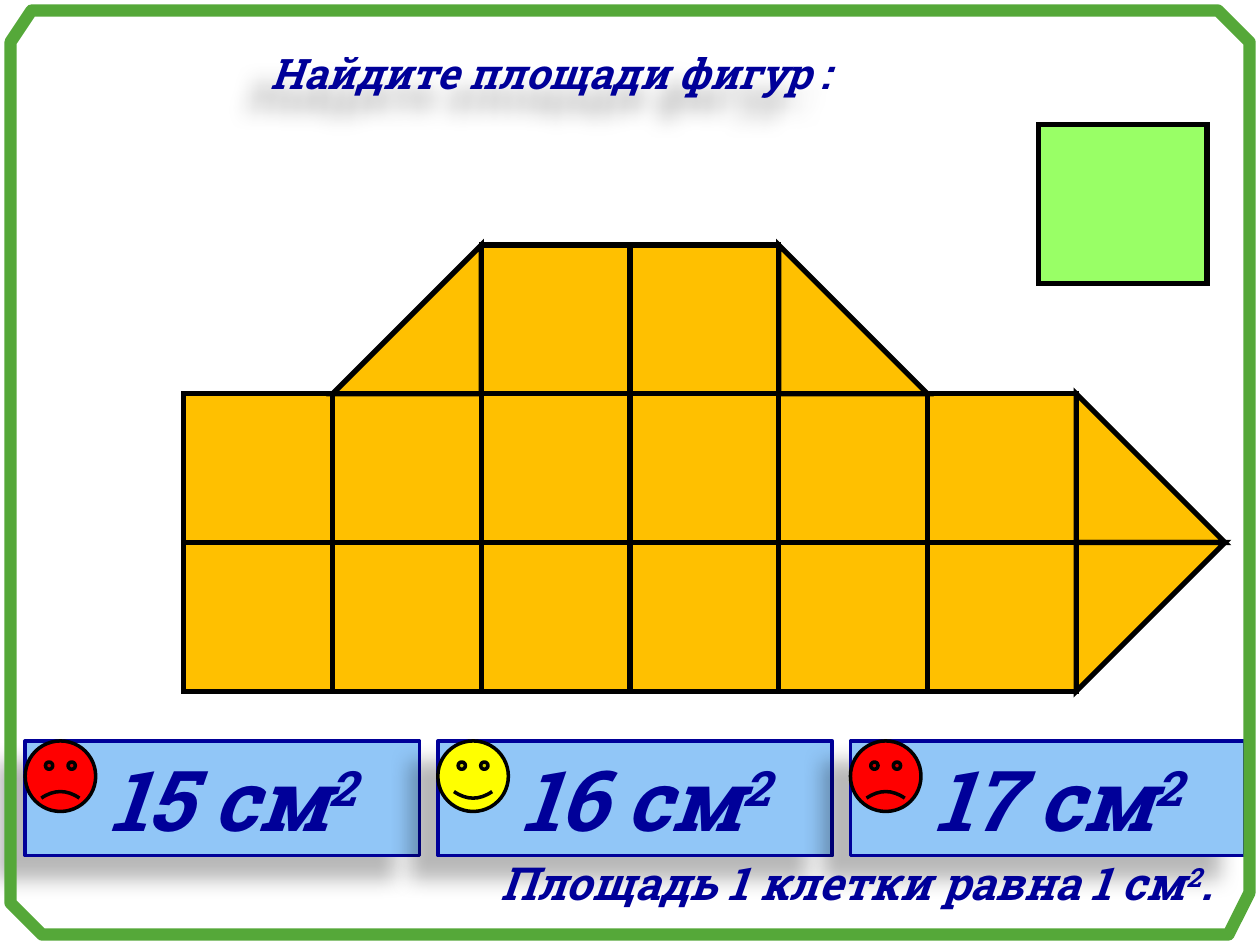
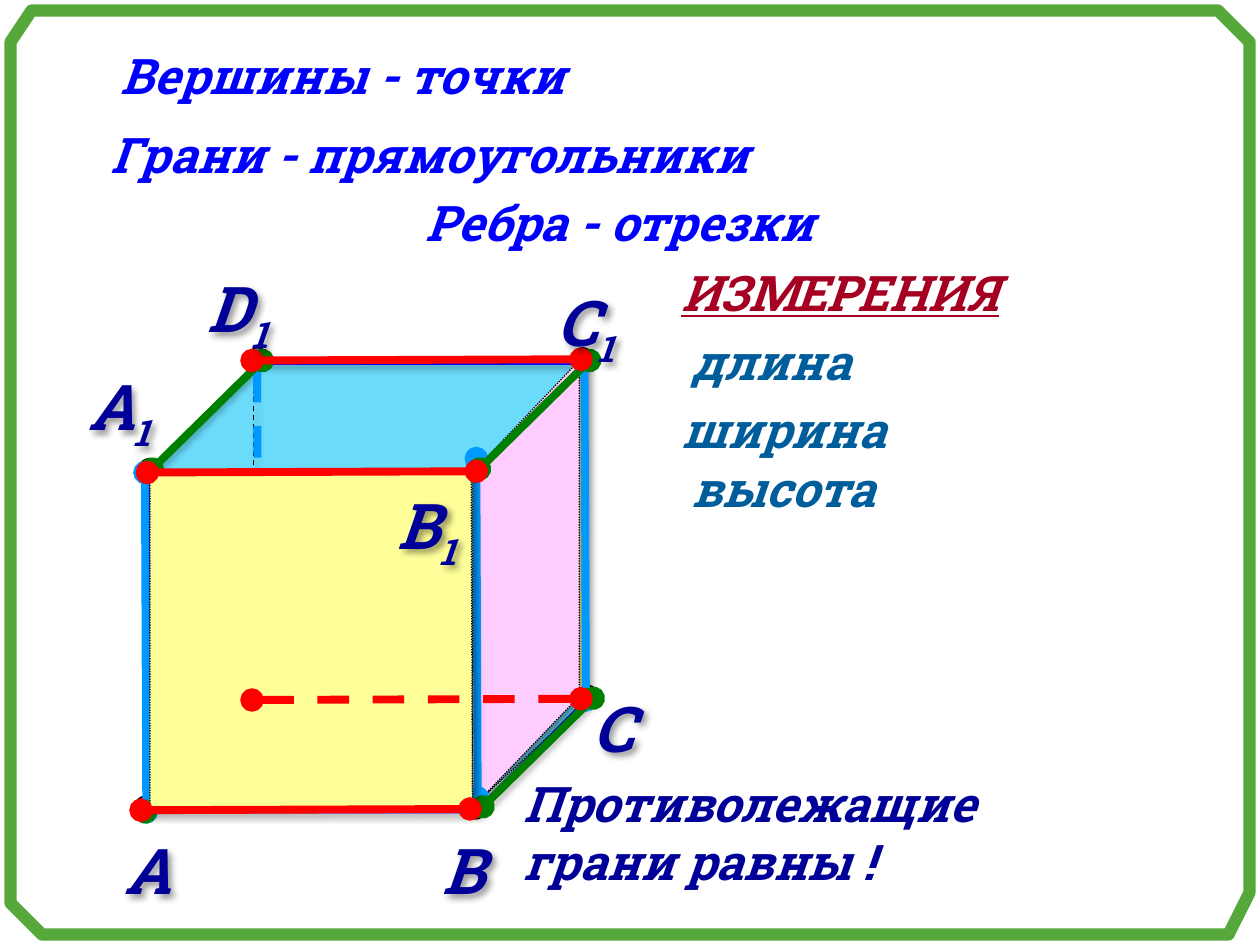
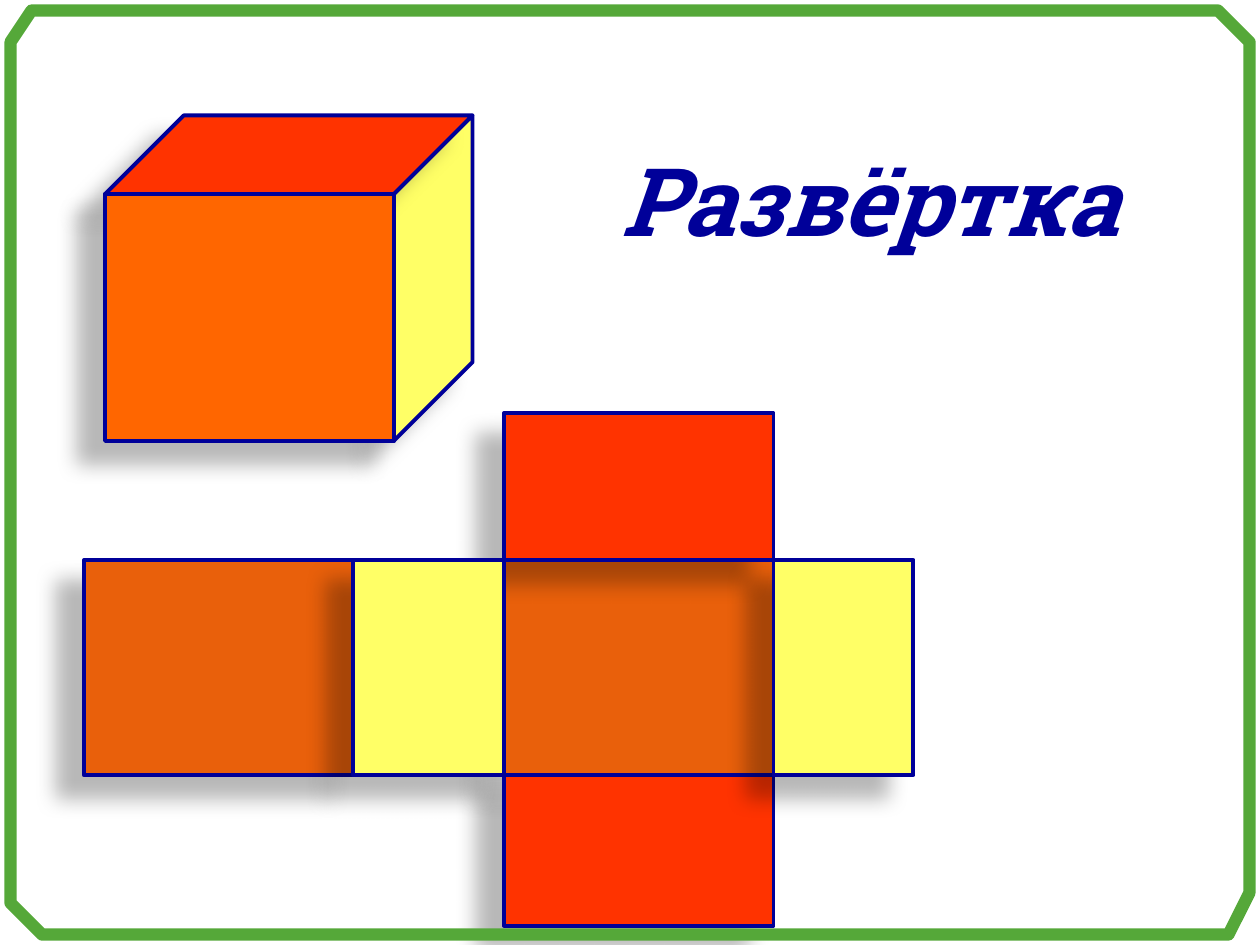
from lxml import etree
from pptx import Presentation
from pptx.dml.color import RGBColor
from pptx.enum.dml import MSO_LINE
from pptx.enum.shapes import MSO_CONNECTOR, MSO_SHAPE
from pptx.enum.text import MSO_ANCHOR, MSO_AUTO_SIZE, PP_ALIGN
from pptx.oxml import parse_xml
from pptx.oxml.ns import nsdecls, qn
from pptx.util import Pt

RECT, SMILEY, TRIANGLE = MSO_SHAPE.RECTANGLE, MSO_SHAPE.SMILEY_FACE, MSO_SHAPE.RIGHT_TRIANGLE
OVAL, CUBE, CALLOUT = MSO_SHAPE.OVAL, MSO_SHAPE.CUBE, MSO_SHAPE.ROUNDED_RECTANGULAR_CALLOUT
STRAIGHT = MSO_CONNECTOR.STRAIGHT
DASH, DOT = MSO_LINE.DASH, MSO_LINE.ROUND_DOT
CENTER, RIGHT = PP_ALIGN.CENTER, PP_ALIGN.RIGHT
TOP, FIT = MSO_ANCHOR.TOP, MSO_AUTO_SIZE.SHAPE_TO_FIT_TEXT

FONT = "Roboto Slab"
COLORS = {
    "navy": "000099", "black": "000000", "frame": "55A839", "answer": "91C6F7",
    "red": "FF0000", "yellow": "FFFF00", "cell": "FFC000", "unit": "99FF66",
    "blue": "0000FF", "pink": "FFCCFF", "cream": "FFFF99", "aqua": "6BDBFA",
    "height": "0099FF", "width": "008000", "measure": "005D9C", "heading": "A50021",
    "rust": "E9600B", "scarlet": "FF3300", "lemon": "FFFF66", "orange": "FF6600",
}
# Blur, distance, direction and opacity in drawing units
SHADOWS = {
    "deep": (150000, 250000, 8460000, 28000),
    "soft": (50800, 38100, 2700000, 40000),
}
SHADOWS = {
    name: f'<a:effectLst {nsdecls("a")}><a:outerShdw blurRad="{blur}" dist="{dist}" '
          f'dir="{angle}" algn="ctr" rotWithShape="0"><a:srgbClr val="000000">'
          f'<a:alpha val="{alpha}"/></a:srgbClr></a:outerShdw></a:effectLst>'
    for name, (blur, dist, angle, alpha) in SHADOWS.items()
}


def draw(slide, outline, fill, line, width=1, dash=None, shadow=None):
    """Draw a preset (kind, left, top, width, height) or a closed list of points."""
    if isinstance(outline, tuple):
        shape = slide.shapes.add_shape(outline[0], *map(Pt, outline[1:]))
    else:
        points = [(Pt(x), Pt(y)) for x, y in outline]
        builder = slide.shapes.build_freeform(*points[0])
        builder.add_line_segments(points[1:], close=True)
        shape = builder.convert_to_shape()
    for paint, color in ((shape.fill, fill), (shape.line.fill, line)):
        if color:
            paint.solid()
            paint.fore_color.rgb = RGBColor.from_string(COLORS[color])
        else:
            paint.background()
    shape.line.width = Pt(width)
    if dash:
        shape.line.dash_style = dash
    if shadow:
        shape._element.spPr.append(parse_xml(SHADOWS[shadow]))
    else:
        shape.shadow.inherit = False
    return shape


def write(shape, paragraphs, size, color="navy", align=None, shift=0, wrap=True):
    """Fill a shape with paragraphs; every second run is shifted off the baseline."""
    frame = shape.text_frame
    frame.word_wrap = wrap
    for number, runs in enumerate(paragraphs):
        paragraph = frame.add_paragraph() if number else frame.paragraphs[0]
        paragraph.alignment = align
        font = paragraph.font
        font.name, font.size, font.bold, font.italic = FONT, Pt(size), True, True
        font.color.rgb = RGBColor.from_string(COLORS[color])
        for position, text in enumerate(runs):
            run = paragraph.add_run()
            run.text = text
            if position % 2:
                run._r.get_or_add_rPr().set("baseline", str(shift))
    return frame


prs = Presentation()
prs.slide_width, prs.slide_height = Pt(720), Pt(540)
areas, solid, unfolding = [prs.slides.add_slide(prs.slide_layouts[6]) for _ in range(3)]

# Slide 1: answers with their faces
answers = [(" 15 см", "red", -0.047), (" 16 см", "yellow", 0.047), (" 17 см", "red", -0.047)]
ANSWER_LEFT, ANSWER_STEP, ANSWER_TOP = 14.4, 235.8, 423.4
for i, (value, _, _) in enumerate(answers):
    answer = draw(areas, (RECT, ANSWER_LEFT + i * ANSWER_STEP, ANSWER_TOP, 225.4, 65.5),
                  "answer", "navy", 2, shadow="deep")
    write(answer, [(value, "2")], 48, align=CENTER, shift=30000)
for i, (_, color, smile) in enumerate(answers):
    face = draw(areas, (SMILEY, ANSWER_LEFT + i * ANSWER_STEP, ANSWER_TOP, 40.3, 40.3),
                color, "black", 2)
    face.adjustments[0] = smile

# Figure of whole and half cells: column, row, kind, rotation
CELL, FIGURE_LEFT, FIGURE_TOP = 85, 105, 140
cells = [(column, row, RECT, 0) for row in (2, 1) for column in range(6)]
cells += [(3, 0, RECT, 0), (2, 0, RECT, 0), (4, 0, TRIANGLE, 0), (1, 0, TRIANGLE, 270),
          (6, 1, TRIANGLE, 0), (6, 2, TRIANGLE, 90)]
for column, row, kind, rotation in cells:
    left, top = FIGURE_LEFT + column * CELL, FIGURE_TOP + row * CELL
    cell = draw(areas, (kind, left, top, CELL, CELL), "cell", "black", 3)
    cell.rotation = rotation
    etree.SubElement(cell.line._get_or_add_ln(), qn("a:miter"), lim="800000")

# Task, unit of area and its square
task = draw(areas, (CALLOUT, 127.4, 21, 374.4, 57), None, None, shadow="deep")
for i, value in enumerate((-0.449, 1.7, 0.167)):
    task.adjustments[i] = value
write(task, [("Найдите площади фигур :",)], 24, align=CENTER).vertical_anchor = TOP
unit_note = areas.shapes.add_textbox(Pt(206.6), Pt(485.3), Pt(493.2), Pt(39))
write(unit_note, [("Площадь 1 клетки равна 1 см", "2", ".")], 26, align=RIGHT, shift=30000)
unit = draw(areas, (RECT, 593.3, 71.3, 96.5, 90.7), "unit", "black", 3)
etree.SubElement(unit.line._get_or_add_ln(), qn("a:miter"), lim="800000")

# Slide 2: faces behind the edges
for points, color, shadow in [
    ([(146, 206), (333, 207), (333, 399), (146, 400)], "cream", "soft"),
    ([(151, 206), (338, 206), (270, 269), (85, 269)], "aqua", None),
    ([(150, 399), (337, 399), (269, 462), (84, 462)], "aqua", None),
]:
    draw(solid, points, color, "black", 0.75, DOT, shadow)
draw(solid, (CUBE, 85, 207.4, 249, 256.3), None, "blue", 2.25, shadow="soft")
hidden_edge = solid.shapes.add_connector(STRAIGHT, Pt(144.7), Pt(206), Pt(144.7), Pt(396))
hidden_edge.line.color.rgb = RGBColor.from_string(COLORS["black"])
hidden_edge.line.width, hidden_edge.line.dash_style = Pt(0.75), DASH
hidden_edge._element.spPr.append(parse_xml(SHADOWS["soft"]))
draw(solid, [(270, 461.5), (331, 398), (331, 206), (270, 270)],
     "pink", "black", 0.75, DOT, "soft")

# Vertices
for left, top in [(265.7, 455), (329.8, 391.7), (326.9, 198.7), (267.1, 260.6),
                  (141.1, 198.7), (79.2, 262.1), (141.1, 391.7), (77, 455)]:
    draw(solid, (OVAL, left, top, 12.2, 13), "red", "black", 0.75)

# Edges in three directions; the last of each four is hidden
for color, (dx, dy), starts in [
    ("height", (0.8, 194), [(334, 206), (272.2, 262), (82.8, 270), (146.9, 206)]),
    ("width", (-63, 62), [(339, 399), (337, 206), (150, 206), (146, 402)]),
    ("red", (188, -0.7), [(80.6, 463), (144, 206), (84.2, 270), (144, 400)]),
]:
    if color == "red":  # the front face lies between the side and the front edges
        draw(solid, [(85.7, 270), (269.3, 270), (270, 461), (85.7, 462)],
             "cream", "black", 0.75, DOT, "soft")
    for i, (x, y) in enumerate(starts):
        edge = solid.shapes.add_connector(STRAIGHT, Pt(x), Pt(y), Pt(x + dx), Pt(y + dy))
        edge.line.color.rgb = RGBColor.from_string(COLORS[color])
        edge.line.width = Pt(4.5)
        if i == 3:
            edge.line.dash_style = DASH
        for end in ("a:headEnd", "a:tailEnd"):
            etree.SubElement(edge.line._get_or_add_ln(), qn(end), type="oval")
        etree.SubElement(edge._element.spPr, qn("a:effectLst"))

# Vertex names
for runs, left, top, width in [
    (("А",), 64, 471.6, 65.5), (("В",), 245.5, 471.6, 65.5), (("С",), 331.2, 390.2, 41.8),
    (("D", "1"), 111.6, 150.5, 71.3), (("С", "1"), 311, 158.4, 56.9),
    (("А", "1"), 43.2, 206.6, 82), (("В", "1"), 220.3, 274.3, 82),
]:
    vertex_name = solid.shapes.add_textbox(Pt(left), Pt(top), Pt(width), Pt(51))
    write(vertex_name, [runs], 36, shift=-25000, wrap=False).auto_size = FIT
    vertex_name._element.spPr.append(parse_xml(SHADOWS["soft"]))

# Facts and measurements
for text, left, top, width, color, wrap in [
    ("Вершины - точки", 62, 22.3, 291, "blue", False),
    ("Грани - прямоугольники", 56.2, 67.7, 397.4, "blue", False),
    ("Ребра - отрезки", 236.2, 106.6, 264.2, "blue", False),
    ("длина", 388, 185.8, 150, "measure", True),
    ("ширина", 382.3, 224.6, 186, "measure", True),
    ("высота", 388, 258.5, 180, "measure", True),
    ("ИЗМЕРЕНИЯ", 382.3, 146.2, 306, "heading", True),
]:
    fact = solid.shapes.add_textbox(Pt(left), Pt(top), Pt(width), Pt(41))
    frame = write(fact, [(text,)], 28, color, wrap=wrap)
    frame.auto_size = FIT
    if color == "heading":
        frame.paragraphs[0].font.underline = True
conclusion = solid.shapes.add_textbox(Pt(292.3), Pt(438.5), Pt(401.8), Pt(77))
frame = write(conclusion, [("Противолежащие",), ("грани равны !",)], 28)
frame.paragraphs[1].line_spacing = 0.5
frame.paragraphs[1].space_before = Pt(14)

# Slide 3: net of the box, placed on its fold lines
fold_x, fold_y = [48, 202, 288, 442, 522], [236, 320, 443, 529]
for column, row, color in [(2, 1, "rust"), (0, 1, "rust"), (2, 0, "scarlet"),
                           (2, 2, "scarlet"), (3, 1, "lemon"), (1, 1, "lemon")]:
    left, top = fold_x[column], fold_y[row]
    draw(unfolding, (RECT, left, top, fold_x[column + 1] - left, fold_y[row + 1] - top),
         color, "navy", 2.25, shadow="deep")

# Folded box
for points, color in [
    ([(225, 111), (225, 252), (270, 207), (270, 66)], "lemon"),
    ([(105, 66), (270, 66), (225, 111), (60, 111)], "scarlet"),
    ([(60, 111), (225, 111), (225, 252), (60, 252)], "orange"),
]:
    draw(unfolding, points, color, "navy", 2.25, shadow="deep")
title = unfolding.shapes.add_textbox(Pt(347.8), Pt(77.8), Pt(306), Pt(90))
write(title, [("Развёртка",)], 54, wrap=False)

# Frame around every slide
for slide in prs.slides:
    draw(slide, [(6, 24), (6, 516), (24, 534), (702, 534),
                 (714, 510), (714, 24), (696, 6), (18, 6)], None, "frame", 7)

prs.save("out.pptx")
